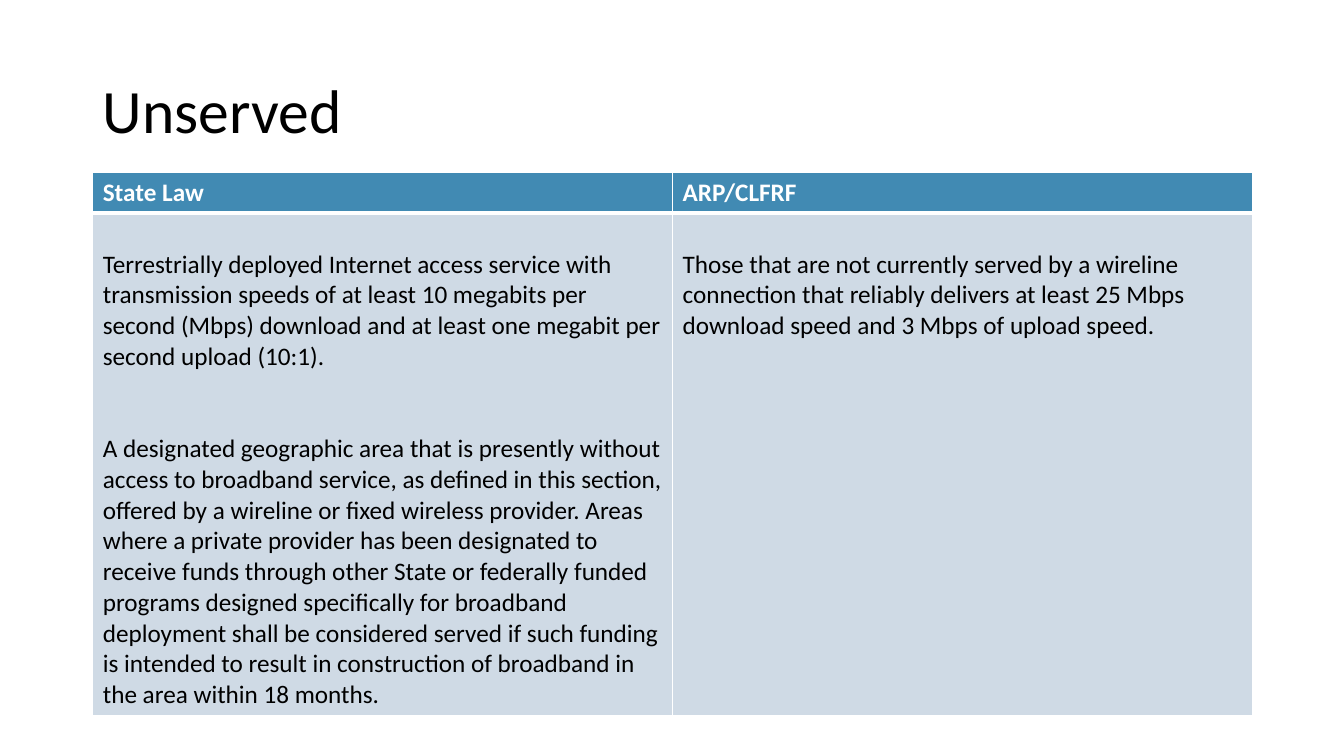
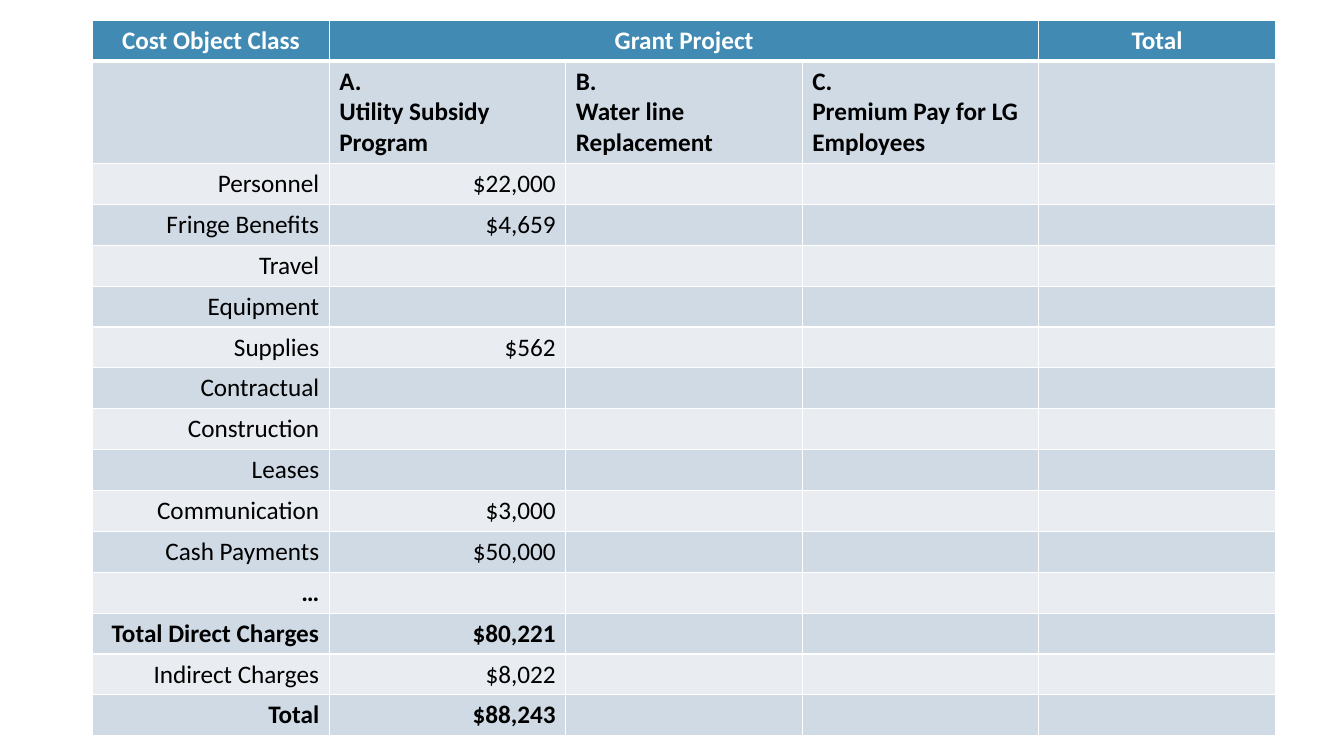
"""Build two slides of tables on broadband definitions and grant costs."""
from lxml import etree
from pptx import Presentation
from pptx import util as u
from pptx.dml.color import RGBColor
from pptx.enum import text
from pptx.oxml.ns import qn

FONT = "Calibri"
BLACK, WHITE = "000000", "FFFFFF"
HEADER, DARK_BAND, LIGHT_BAND = "418AB3", "CFDAE5", "E9EDF2"
LEFT = u.Inches(0.92)
LINE_HEIGHT = u.Pt(22)
CELL_PADDING = u.Inches(0.1)
ALIGN = text.PP_ALIGN


def color(value):
    """Return the colour for a hex string."""
    return RGBColor.from_string(value)


def row_height(lines):
    """Return the height of a table row holding the given number of lines."""
    return int(lines * LINE_HEIGHT + CELL_PADDING)


class Deck:
    """Hold the shared style and the current slide."""

    def __init__(self):
        """Start a wide presentation."""
        self.presentation = Presentation()
        self.presentation.slide_width = u.Inches(13.33)
        self.presentation.slide_height = u.Inches(7.5)
        self.slide = None

    def add_slide(self, layout):
        """Add a slide with the named layout and make it current."""
        layouts = self.presentation.slide_layouts
        self.slide = self.presentation.slides.add_slide(layouts.get_by_name(layout))

    def format_paragraph(self, paragraph, size, fill, bold=False, align=ALIGN.LEFT):
        """Apply the font and alignment to a paragraph."""
        paragraph.alignment = align
        for run in paragraph.runs:
            run.font.name = FONT
            run.font.size = u.Pt(size)
            run.font.bold = bold
            run.font.color.rgb = color(fill)

    def title(self, wording):
        """Fill and place the title placeholder."""
        shape = self.slide.shapes.title
        shape.left, shape.top = LEFT, u.Inches(0.4)
        shape.width, shape.height = u.Inches(11.5), u.Inches(1.45)
        frame = shape.text_frame
        frame.text = wording
        frame.vertical_anchor = text.MSO_ANCHOR.MIDDLE
        frame.paragraphs[0].line_spacing = 0.9
        self.format_paragraph(frame.paragraphs[0], 44, BLACK)

    def table(self, top, width, heights, columns):
        """Add a table with banded rows under a coloured header."""
        frame = self.slide.shapes.add_table(
            len(heights), columns, LEFT, u.Inches(top), u.Inches(width), sum(heights))
        table = frame.table
        for row, height in zip(table.rows, heights):
            row.height = height
        for index, row in enumerate(table.rows):
            band = HEADER if index == 0 else DARK_BAND if index % 2 else LIGHT_BAND
            for cell in row.cells:
                self.borders(cell, 3 if index == 1 else 1, 3 if index == 0 else 1)
                cell.fill.solid()
                cell.fill.fore_color.rgb = color(band)
        return table

    def borders(self, cell, top, bottom):
        """Draw white lines around a cell."""
        properties = cell._tc.get_or_add_tcPr()
        for side, width in (("L", 1), ("R", 1), ("T", top), ("B", bottom)):
            line = etree.SubElement(properties, qn(f"a:ln{side}"), w=str(u.Pt(width)))
            fill = etree.SubElement(line, qn("a:solidFill"))
            etree.SubElement(fill, qn("a:srgbClr"), val=WHITE)

    def cell_text(self, cell, wording, fill=BLACK, bold=False, align=ALIGN.LEFT):
        """Put one paragraph per line of wording into a cell."""
        cell.text_frame.text = wording
        for paragraph in cell.text_frame.paragraphs:
            self.format_paragraph(paragraph, 18, fill, bold, align)


DEFINITIONS = {
    "State Law": (
        "Terrestrially deployed Internet access service with transmission speeds of at "
        "least 10 megabits per second (Mbps) download and at least one megabit per second "
        "upload (10:1).\n"
        "A designated geographic area that is presently without access to broadband "
        "service, as defined in this section, offered by a wireline or fixed wireless "
        "provider. Areas where a private provider has been designated to receive funds "
        "through other State or federally funded programs designed specifically for "
        "broadband deployment shall be considered served if such funding is intended to "
        "result in construction of broadband in the area within 18 months."),
    "ARP/CLFRF": (
        "Those that are not currently served by a wireline connection that reliably "
        "delivers at least 25 Mbps download speed and 3 Mbps of upload speed."),
}
COST_HEADINGS = {0: "Cost Object Class", 1: "Grant Project", 4: "Total"}
PROJECTS = [
    "A.\nUtility Subsidy Program",
    "B.\nWater line Replacement",
    "C.\nPremium Pay for LG Employees",
]
COSTS = [
    ("Personnel", "$22,000"),
    ("Fringe Benefits", "$4,659"),
    ("Travel", ""),
    ("Equipment", ""),
    ("Supplies", "$562"),
    ("Contractual", ""),
    ("Construction", ""),
    ("Leases", ""),
    ("Communication", "$3,000"),
    ("Cash Payments", "$50,000"),
    ("…", ""),
    ("Total Direct Charges", "$80,221"),
    ("Indirect Charges", "$8,022"),
    ("Total", "$88,243"),
]
BOLD_COSTS = {"…", "Total Direct Charges", "Total"}


def definitions_slide(deck):
    """Compare the two definitions of unserved areas."""
    deck.add_slide("Title Only")
    deck.title("Unserved")
    table = deck.table(1.71, 11.5, [row_height(1), row_height(16)], len(DEFINITIONS))
    for column, (heading, definition) in enumerate(DEFINITIONS.items()):
        deck.cell_text(table.cell(0, column), heading, WHITE, True)
        cell = table.cell(1, column)
        deck.cell_text(cell, definition)
        cell.margin_top = u.Inches(0.05) + LINE_HEIGHT
        for paragraph in cell.text_frame.paragraphs[1:]:
            paragraph.space_before = 2 * LINE_HEIGHT


def costs_slide(deck):
    """List the costs of each grant project."""
    deck.add_slide("Blank")
    heights = [row_height(1), row_height(3)] + [row_height(1)] * len(COSTS)
    table = deck.table(0.2, 11.73, heights, 5)
    table.cell(0, 1).merge(table.cell(0, 3))
    for column, heading in COST_HEADINGS.items():
        deck.cell_text(table.cell(0, column), heading, WHITE, True, ALIGN.CENTER)
    for column, project in enumerate(PROJECTS, 1):
        deck.cell_text(table.cell(1, column), project, bold=True)
    for row, cost in enumerate(COSTS, 2):
        for column, wording in enumerate(cost):
            deck.cell_text(table.cell(row, column), wording,
                           bold=cost[0] in BOLD_COSTS, align=ALIGN.RIGHT)


def main():
    """Build and save the presentation."""
    deck = Deck()
    definitions_slide(deck)
    costs_slide(deck)
    deck.presentation.save("out.pptx")


if __name__ == "__main__":
    main()
